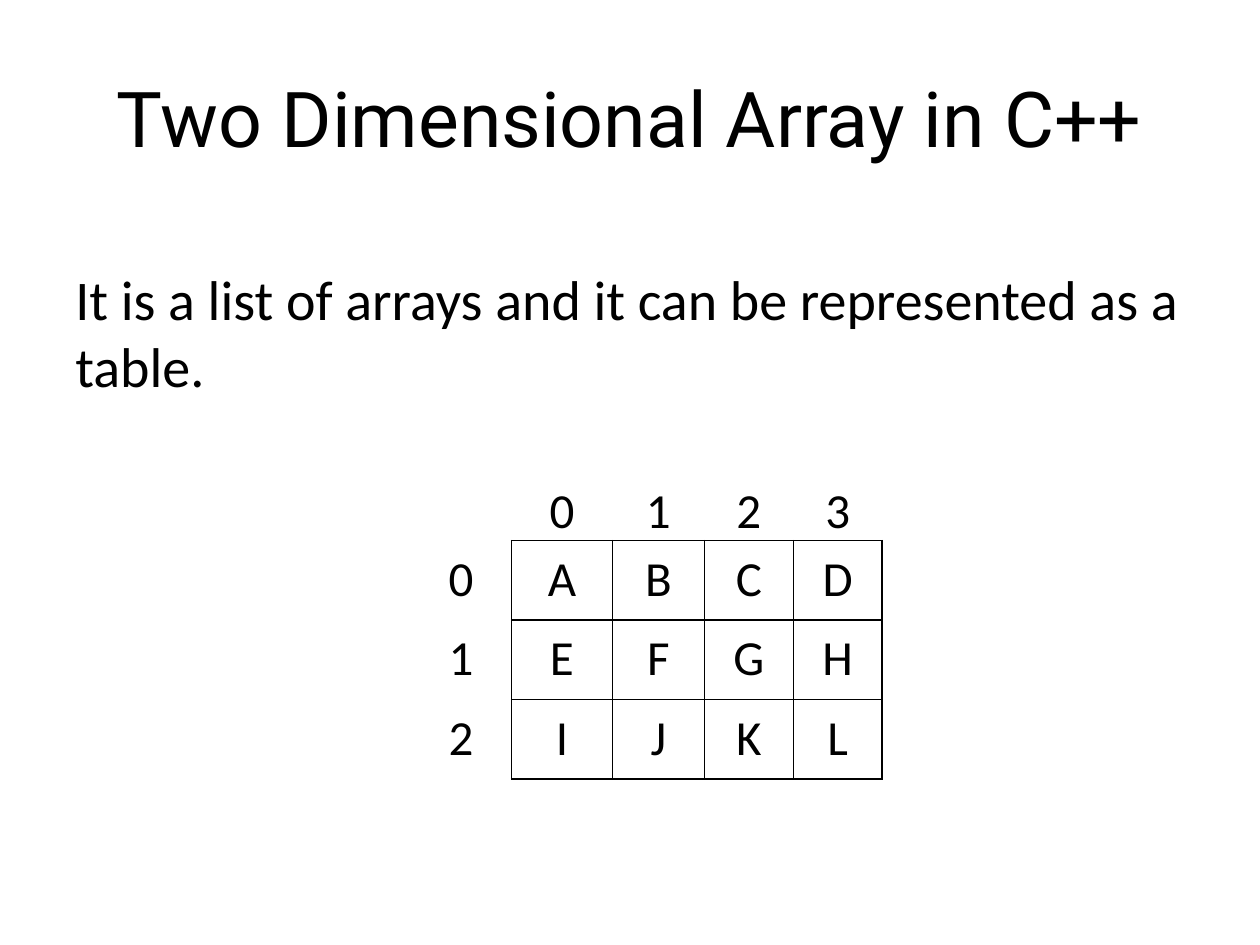
from lxml.etree import SubElement as Sub
from pptx import Presentation
from pptx.dml.color import RGBColor as Rgb
from pptx.enum.text import MSO_ANCHOR as Anchor, PP_ALIGN as Align
from pptx.oxml.ns import qn
from pptx.util import Pt

# Content
TITLE = "Two Dimensional Array in C++"
BODY = "It is a list of arrays and it can be represented as a table."
GRID = ["ABCD", "EFGH", "IJKL"]

# Theme
THEME = {
    "ink": "000000",
    "title": {"name": "Roboto", "size": Pt(44)},
    "body": {"name": "Calibri", "size": Pt(32)},
    "cell": {"name": "Calibri", "size": Pt(28)},
}

# Layout, in points
SIZE = (720, 540)
TITLE_BOX = (36, 21.6, 648, 90)
BODY_BOX = (36, 126, 648, 396)
TABLE_AT = (234.7, 270)
COLS = [57.6, 57.6, 52.6, 50.8, 50.8]
HEAD, ROW = 39, 45.4


def put(item, vals):
    for key, val in vals.items():
        setattr(item, key, val)


def write(frame, text, role, align, gap=None):
    para = frame.paragraphs[0]
    put(para, {"alignment": align, "line_spacing": gap})
    run = para.add_run()
    run.text = text
    put(run.font, THEME[role])
    run.font.color.rgb = Rgb.from_string(THEME["ink"])


def add_text(slide, box, text, role, align, form):
    frame = slide.shapes.add_textbox(*map(Pt, box)).text_frame
    put(frame, {"word_wrap": True, **form})
    write(frame, text, role, align)


def edge(cell, sides):
    """Rule the given sides of a cell and clear the others."""
    props = cell._tc.get_or_add_tcPr()
    for side in "LRTB":
        line = Sub(props, qn(f"a:ln{side}"), w=str(Pt(1)))
        if side in sides:
            fill = Sub(line, qn("a:solidFill"))
            Sub(fill, qn("a:srgbClr"), val=THEME["ink"])
        else:
            Sub(line, qn("a:noFill"))


def add_grid(slide):
    # Index numbers head the columns and the rows
    rows = [["", *map(str, range(len(GRID[0])))]]
    rows += [[str(i), *line] for i, line in enumerate(GRID)]
    highs = [HEAD] + [ROW] * len(GRID)
    area = (*TABLE_AT, sum(COLS), sum(highs))
    table = slide.shapes.add_table(len(rows), len(COLS), *map(Pt, area)).table
    put(table, {"first_row": False, "horz_banding": False})
    for col, wide in zip(table.columns, COLS):
        col.width = Pt(wide)
    for row, high in zip(table.rows, highs):
        row.height = Pt(high)

    form = {"margin_left": Pt(5), "margin_right": Pt(5),
            "margin_top": 0, "margin_bottom": 0}
    for r, line in enumerate(rows):
        for c, text in enumerate(line):
            cell = table.cell(r, c)
            put(cell, form)
            # Labels carry only the side that meets the grid
            edge(cell, "LRTB" if r and c else "R" if r else "B" if c else "")
            cell.fill.background()
            if text:
                write(cell.text_frame, text, "cell", Align.CENTER, 1.15)


def main():
    deck = Presentation()
    deck.slide_width, deck.slide_height = map(Pt, SIZE)
    slide = deck.slides.add_slide(deck.slide_layouts[6])
    add_text(slide, TITLE_BOX, TITLE, "title", Align.CENTER,
             {"vertical_anchor": Anchor.MIDDLE})
    add_text(slide, BODY_BOX, BODY, "body", Align.LEFT,
             {"vertical_anchor": Anchor.TOP, "margin_top": Pt(25)})
    add_grid(slide)
    deck.save("out.pptx")


if __name__ == "__main__":
    main()
